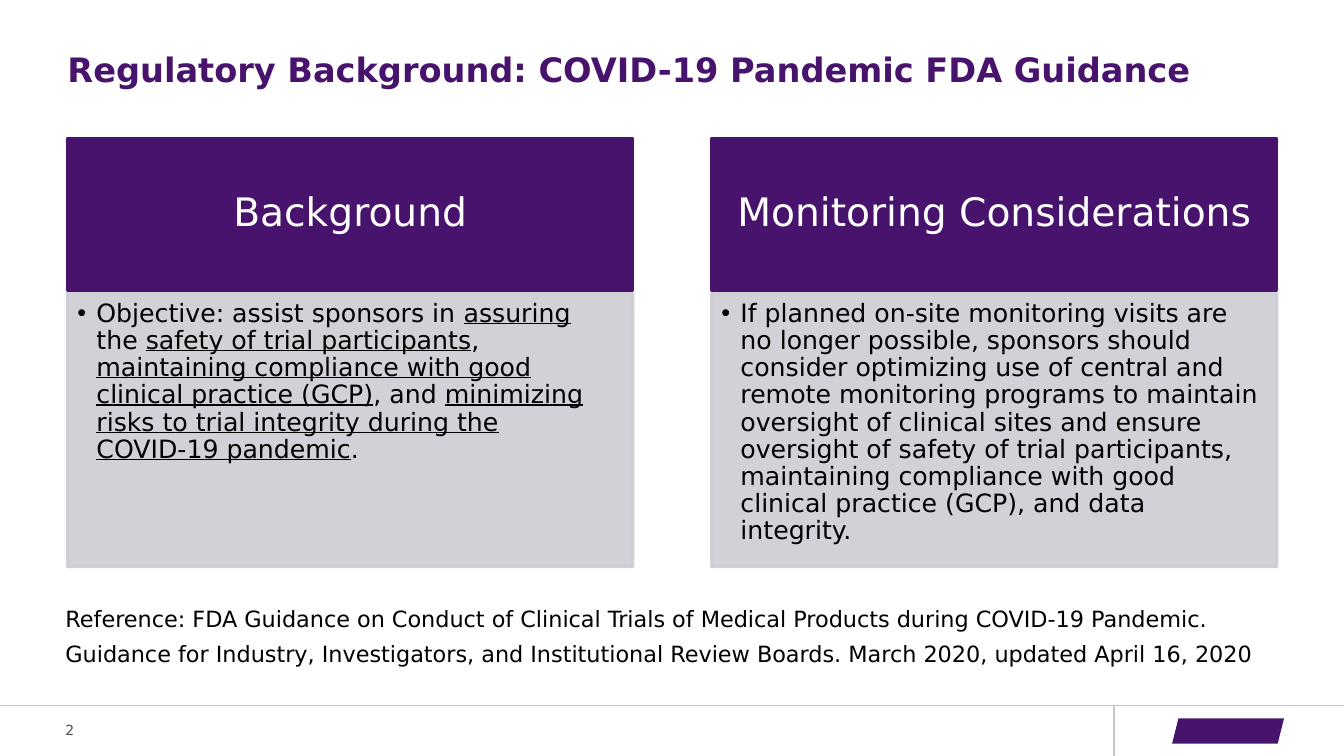
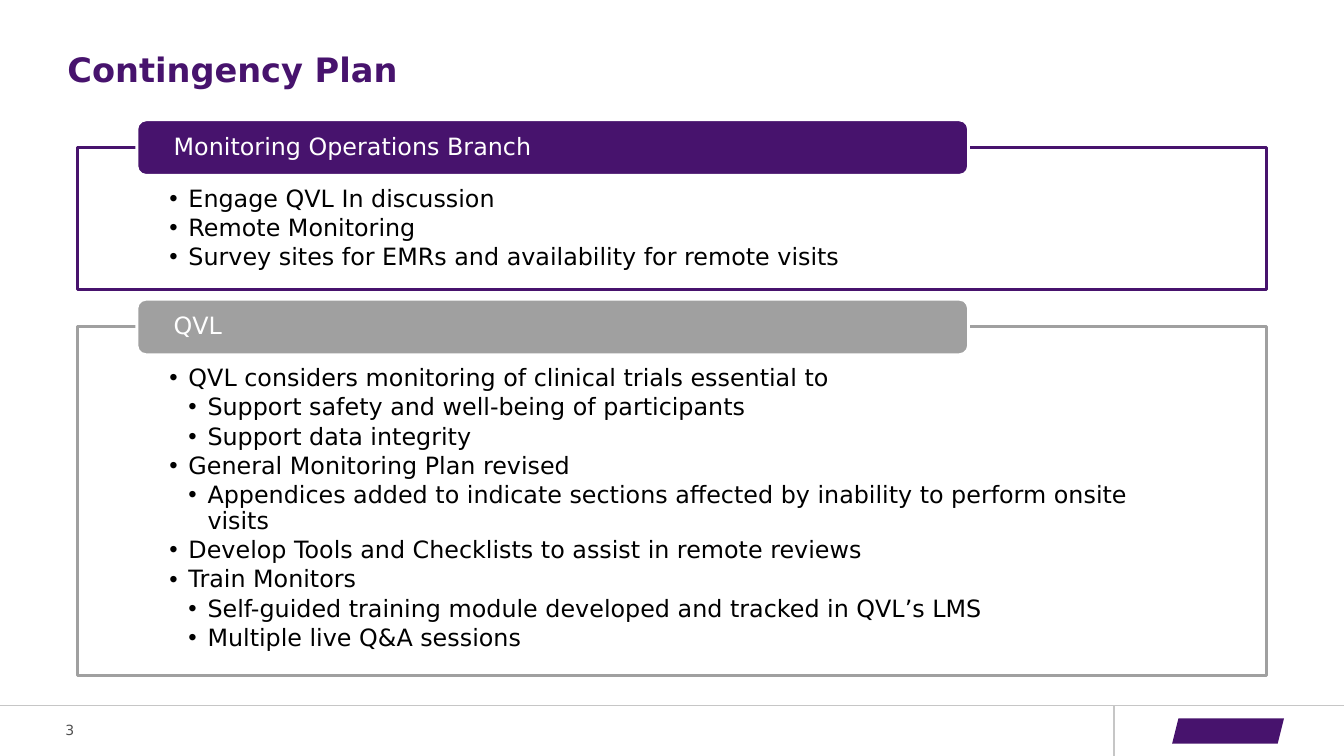
from dataclasses import dataclass

from lxml.etree import SubElement
from pptx import Presentation
from pptx.dml.color import RGBColor
from pptx.enum.shapes import MSO_CONNECTOR, MSO_SHAPE
from pptx.enum.text import MSO_ANCHOR, MSO_AUTO_SIZE, PP_ALIGN
from pptx.oxml.ns import qn
from pptx.util import Cm, Pt

COLORS = {
    "purple": "47136D",
    "lilac": "CFCCD4",
    "gray": "A0A0A0",
    "rule": "C6C6C6",
    "number": "515151",
    "white": "FFFFFF",
    "black": "000000",
}
FONT = "DejaVu Sans"
PAGE_WIDTH, PAGE_HEIGHT = 33.87, 19.05
MARGIN = 1.7
BULLET_INDENT = 0.48
TWO_CONTENT = 3


@dataclass(frozen=True)
class Box:
    """Position and size in centimetres."""
    left: float
    top: float
    width: float
    height: float


@dataclass(frozen=True)
class Span:
    text: str
    underlined: bool = False


@dataclass(frozen=True)
class Item:
    spans: tuple[Span, ...]
    level: int = 1


@dataclass(frozen=True)
class Column:
    heading: str
    item: Item


@dataclass(frozen=True)
class Section:
    heading: str
    color: str
    top: float
    height: float
    items: tuple[Item, ...]


def line_item(text: str, level: int = 1) -> Item:
    return Item((Span(text),), level)


COLUMNS = (
    Column("Background", Item((
        Span("Objective: assist sponsors in "),
        Span("assuring", True),
        Span(" the "),
        Span("safety of trial participants", True),
        Span(", "),
        Span("maintaining compliance with good clinical practice (GCP)", True),
        Span(", and "),
        Span("minimizing risks to trial integrity during the COVID-19 pandemic", True),
        Span("."),
    ))),
    Column("Monitoring Considerations", line_item(
        "If planned on-site monitoring visits are no longer possible, sponsors should "
        "consider optimizing use of central and remote monitoring programs to maintain "
        "oversight of clinical sites and ensure oversight of safety of trial participants, "
        "maintaining compliance with good clinical practice (GCP), and data integrity.")),
)
REFERENCE = (
    "Reference: FDA Guidance on Conduct of Clinical Trials of Medical Products "
    "during COVID-19 Pandemic.",
    "Guidance for Industry, Investigators, and Institutional Review Boards. "
    "March 2020, updated April 16, 2020",
)
SECTIONS = (
    Section("Monitoring Operations Branch", "purple", 3.71, 3.58, (
        line_item("Engage QVL In discussion"),
        line_item("Remote Monitoring"),
        line_item("Survey sites for EMRs and availability for remote visits"),
    )),
    Section("QVL", "gray", 8.23, 8.79, (
        line_item("QVL considers monitoring of clinical trials essential to"),
        line_item("Support safety and well-being of participants", 2),
        line_item("Support data integrity", 2),
        line_item("General Monitoring Plan revised"),
        line_item("Appendices added to indicate sections affected by inability "
                  "to perform onsite visits", 2),
        line_item("Develop Tools and Checklists to assist in remote reviews"),
        line_item("Train Monitors"),
        line_item("Self-guided training module developed and tracked in QVL’s LMS", 2),
        line_item("Multiple live Q&A sessions", 2),
    )),
)


# Shared formatting
def rgb(name: str) -> RGBColor:
    return RGBColor.from_string(COLORS[name])


def place(shape, box: Box) -> None:
    shape.left, shape.top = Cm(box.left), Cm(box.top)
    shape.width, shape.height = Cm(box.width), Cm(box.height)


def paint(shape, fill: str, line: str) -> None:
    shape.fill.solid()
    shape.fill.fore_color.rgb = rgb(fill)
    shape.line.color.rgb = rgb(line)
    shape.line.width = Pt(2)


def make_translucent(shape, percent: int) -> None:
    for color in shape.element.spPr.iter(qn("a:srgbClr")):
        SubElement(color, qn("a:alpha"), val=str(percent * 1000))


def set_frame(shape, insets: tuple[float, float, float, float] = (0, 0, 0, 0),
              anchor: MSO_ANCHOR = MSO_ANCHOR.TOP):
    frame = shape.text_frame
    frame.word_wrap = True
    frame.auto_size = MSO_AUTO_SIZE.NONE
    frame.vertical_anchor = anchor
    (frame.margin_left, frame.margin_top,
     frame.margin_right, frame.margin_bottom) = map(Cm, insets)
    return frame


def style(para, size: float, color: str, bold: bool = False) -> None:
    para.font.name = FONT
    para.font.size = Pt(size)
    para.font.bold = bold
    para.font.color.rgb = rgb(color)


def add_block(page, kind: MSO_SHAPE, box: Box, fill: str, line: str):
    block = page.shapes.add_shape(
        kind, Cm(box.left), Cm(box.top), Cm(box.width), Cm(box.height))
    block.shadow.inherit = False
    paint(block, fill, line)
    return block


def add_heading(page, kind: MSO_SHAPE, box: Box, text: str, fill: str, line: str,
                size: float, align: PP_ALIGN, side_inset: float) -> None:
    block = add_block(page, kind, box, fill, line)
    para = set_frame(block, (side_inset, 0, side_inset, 0), MSO_ANCHOR.MIDDLE).paragraphs[0]
    para.text = text
    para.alignment = align
    para.line_spacing = 0.9
    style(para, size, "white")


def fill_list(body, box: Box, items: tuple[Item, ...], size: float,
              insets: tuple[float, float, float, float]) -> None:
    place(body, box)
    frame = set_frame(body, insets)
    for index, item in enumerate(items):
        para = frame.add_paragraph() if index else frame.paragraphs[0]
        para.level = item.level - 1
        properties = para._p.get_or_add_pPr()
        properties.set("marL", str(Cm(BULLET_INDENT * item.level)))
        properties.set("indent", str(-Cm(BULLET_INDENT)))
        SubElement(properties, qn("a:buChar"), char="•")
        para.alignment = PP_ALIGN.LEFT
        para.line_spacing = 0.9
        para.space_before = Pt(0)
        para.space_after = Pt(0.15 * size)
        style(para, size, "black")
        for span in item.spans:
            run = para.add_run()
            run.text = span.text
            if span.underlined:
                run.font.underline = True


def add_text(page, box: Box, lines: tuple[str, ...], size: float, color: str,
             anchor: MSO_ANCHOR = MSO_ANCHOR.TOP) -> None:
    text_box = page.shapes.add_textbox(
        Cm(box.left), Cm(box.top), Cm(box.width), Cm(box.height))
    frame = set_frame(text_box, anchor=anchor)
    for index, line in enumerate(lines):
        para = frame.add_paragraph() if index else frame.paragraphs[0]
        para.text = line
        para.space_before = Pt(6 if index else 0)
        style(para, size, color)


def add_rule(page, start: tuple[float, float], end: tuple[float, float]) -> None:
    rule = page.shapes.add_connector(
        MSO_CONNECTOR.STRAIGHT, *map(Cm, start), *map(Cm, end))
    rule.line.color.rgb = rgb("rule")
    rule.line.width = Pt(1)
    SubElement(rule.element.spPr, qn("a:effectLst"))


# Title and footer common to every page
def add_page(deck, title: str, number: int):
    page = deck.slides.add_slide(deck.slide_layouts[TWO_CONTENT])
    place(page.shapes.title, Box(MARGIN, 0.64, 30.48, 2.18))
    para = set_frame(page.shapes.title, anchor=MSO_ANCHOR.MIDDLE).paragraphs[0]
    para.text = title
    para.alignment = PP_ALIGN.LEFT
    style(para, 24, "purple", bold=True)

    footer_top, divider = 17.78, 28.07
    add_rule(page, (0, footer_top), (PAGE_WIDTH, footer_top))
    add_rule(page, (divider, footer_top), (divider, PAGE_HEIGHT))
    add_text(page, Box(1.65, 18.08, 1.45, 0.64), (str(number),), 10, "number",
             MSO_ANCHOR.MIDDLE)
    emblem = add_block(page, MSO_SHAPE.PARALLELOGRAM, Box(29.54, 18.1, 2.82, 0.64),
                       "purple", "purple")
    emblem.line.fill.background()
    return page


# Two headed columns with a reference below
def build_background(deck) -> None:
    page = add_page(deck, "Regulatory Background: COVID-19 Pandemic FDA Guidance", 2)
    width, pitch = 14.25, 16.23
    heading_top, heading_height, body_height = 3.48, 3.84, 6.96
    for index, column in enumerate(COLUMNS):
        left = MARGIN + index * pitch
        body = page.placeholders[index + 1]
        paint(body, "lilac", "lilac")
        make_translucent(body, 90)
        fill_list(body, Box(left, heading_top + heading_height, width, body_height),
                  (column.item,), 18, (0.25, 0.25, 0.36, 0.41))
        add_heading(page, MSO_SHAPE.RECTANGLE,
                    Box(left, heading_top, width, heading_height), column.heading,
                    "purple", "purple", 28, PP_ALIGN.CENTER, 0.56)
    add_text(page, Box(1.65, 15.24, 31.8, 2.5), REFERENCE, 16, "black")


# Framed lists, each with a tab over its top edge
def build_plan(deck) -> None:
    page = add_page(deck, "Contingency Plan", 3)
    for index, section in enumerate(SECTIONS):
        body = page.placeholders[index + 1]
        paint(body, "white", section.color)
        fill_list(body, Box(1.96, section.top, 29.95, section.height),
                  section.items, 17, (2.31, 0.99, 2.31, 0.33))
        add_heading(page, MSO_SHAPE.ROUNDED_RECTANGLE,
                    Box(3.45, section.top - 0.69, 20.96, 1.4), section.heading,
                    section.color, "white", 17, PP_ALIGN.LEFT, 0.86)


def main() -> None:
    deck = Presentation()
    deck.slide_width, deck.slide_height = Cm(PAGE_WIDTH), Cm(PAGE_HEIGHT)
    build_background(deck)
    build_plan(deck)
    deck.save("out.pptx")


if __name__ == "__main__":
    main()
